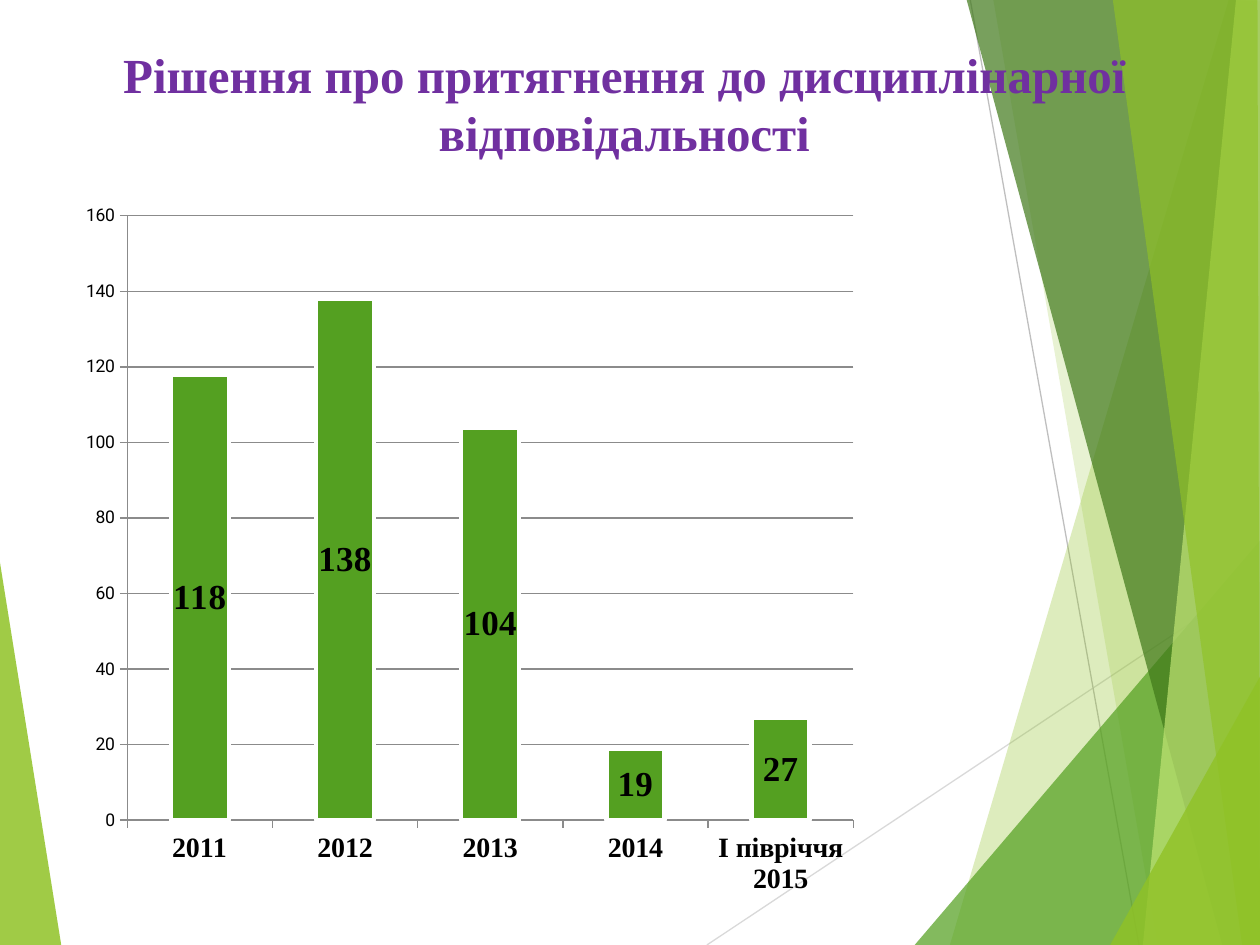
import pptx
import pptx.chart.data
import pptx.dml.color
import pptx.enum.chart
import pptx.enum.shapes
import pptx.enum.text
import pptx.oxml
import pptx.oxml.ns
import pptx.util
from lxml import etree

Cm, Pt = pptx.util.Cm, pptx.util.Pt
SERIF = "Times New Roman"


def colour(target, value, opacity=100):
    """Give a fill a solid colour, or a font or line its colour."""
    if hasattr(target, "solid"):
        target.solid()
        target.fore_color.rgb = pptx.dml.color.RGBColor.from_string(value)
        if opacity < 100:
            node = target._xPr.find(".//" + pptx.oxml.ns.qn("a:srgbClr"))
            etree.SubElement(node, pptx.oxml.ns.qn("a:alpha"), val=str(opacity * 1000))
    else:
        target.color.rgb = pptx.dml.color.RGBColor.from_string(value)


def style_font(font, size, name, bold=False, value="000000"):
    font.size, font.name, font.bold = Pt(size), name, bold
    colour(font, value)


deck = pptx.Presentation()
deck.slide_width, deck.slide_height = Cm(25.4), Cm(19.05)
page = deck.slides.add_slide(deck.slide_layouts[5])

# Thin lines behind the facets
rays = [("D9D9D9", 14.25, 19.05, 25.43, 11.61), ("BFBFBF", 19.56, 0, 22.96, 19.05)]
for value, *ends in rays:
    ray = page.shapes.add_connector(
        pptx.enum.shapes.MSO_CONNECTOR.STRAIGHT, *[Cm(end) for end in ends])
    colour(ray.line, value)
    ray.line.width = Pt(0.75)
    etree.SubElement(ray.element.spPr, pptx.oxml.ns.qn("a:effectLst"))

# Translucent facets: colour, opacity in percent, corners in cm
TOP, BOTTOM, RIGHT = -0.03, 19.05, 25.43
facets = [
    ("90C226", 85, [(-0.03, 11.15), (1.24, 19.08), (-0.03, BOTTOM)]),
    ("90C226", 30, [(24.77, 0), (19.15, BOTTOM), (25.45, 19.08), (RIGHT, 0.03)]),
    ("90C226", 20, [(20.02, TOP), (23.34, BOTTOM), (RIGHT, BOTTOM), (RIGHT, TOP)]),
    ("54A021", 72, [(18.44, BOTTOM), (25.4, 10.9), (RIGHT, BOTTOM)]),
    ("3F7819", 70, [(19.48, TOP), (24.64, BOTTOM), (RIGHT, BOTTOM), (RIGHT, TOP)]),
    ("C0E474", 70, [(24.92, TOP), (23.04, BOTTOM), (RIGHT, BOTTOM), (25.4, TOP)]),
    ("90C226", 65, [(22.43, TOP), (25.04, BOTTOM), (25.4, BOTTOM), (25.35, TOP)]),
    ("90C226", 80, [(22.38, BOTTOM), (RIGHT, 13.59), (RIGHT, BOTTOM)]),
]
for value, opacity, corners in facets:
    points = [(Cm(x), Cm(y)) for x, y in corners]
    outline = page.shapes.build_freeform(*points[0])
    outline.add_line_segments(points[1:], close=True)
    facet = outline.convert_to_shape()
    facet.shadow.inherit = False
    colour(facet.fill, value, opacity)
    facet.line.fill.background()

# Title, brought in front of the facets
title = page.shapes.title
title.element.getparent().append(title.element)
title.left, title.top, title.width, title.height = Cm(1.27), Cm(0.76), Cm(22.63), Cm(3.18)
title.text_frame.word_wrap = True
title.text_frame.auto_size = pptx.enum.text.MSO_AUTO_SIZE.NONE
title.text_frame.vertical_anchor = pptx.enum.text.MSO_ANCHOR.TOP
para = title.text_frame.paragraphs[0]
para.alignment = pptx.enum.text.PP_ALIGN.CENTER
span = para.add_run()
span.text = "Рішення про притягнення до дисциплінарної відповідальності"
style_font(span.font, 28, SERIF, True, "7030A0")

# Column chart
data = pptx.chart.data.CategoryChartData()
data.categories = ["2011", "2012", "2013", "2014", "І півріччя 2015"]
data.add_series("Series 1", [118, 138, 104, 19, 27])
chart = page.shapes.add_chart(
    pptx.enum.chart.XL_CHART_TYPE.COLUMN_STACKED,
    Cm(1.09), Cm(3.94), Cm(23.42), Cm(14.2), data).chart
chart.has_legend = chart.has_title = False
style_font(chart.font, 10, "Roboto")

plot = chart.plots[0]
plot.gap_width, plot.overlap, plot.vary_by_categories = 150, 100, False
columns = plot.series[0]
colour(columns.format.fill, "54A021")
colour(columns.format.line, "FFFFFF")
columns.format.line.width = Pt(2.5)
labels = columns.data_labels
labels.show_value = True
style_font(labels.font, 20, SERIF, True)

# Axes and gridlines
years, counts = chart.category_axis, chart.value_axis
counts.minimum_scale, counts.maximum_scale, counts.major_unit = 0, 160, 20
counts.has_major_gridlines = True
style_font(years.tick_labels.font, 16, SERIF, True)
for axis in (years, counts):
    axis.major_tick_mark = pptx.enum.chart.XL_TICK_MARK.OUTSIDE
for part in (years, counts, counts.major_gridlines):
    colour(part.format.line, "8B8B8B")
    part.format.line.width = Pt(0.75)

# Fixed inner plot area
area = chart.element.find(".//" + pptx.oxml.ns.qn("c:plotArea"))
for old in area.findall(pptx.oxml.ns.qn("c:layout")):
    area.remove(old)
layout = etree.Element(pptx.oxml.ns.qn("c:layout"))
manual = etree.SubElement(layout, pptx.oxml.ns.qn("c:manualLayout"))
settings = [("layoutTarget", "inner"), ("xMode", "edge"), ("yMode", "edge"),
            ("x", "0.063"), ("y", "0.029"), ("w", "0.625"), ("h", "0.858")]
for tag, setting in settings:
    etree.SubElement(manual, pptx.oxml.ns.qn("c:" + tag), val=setting)
area.insert(0, layout)

deck.save("out.pptx")
